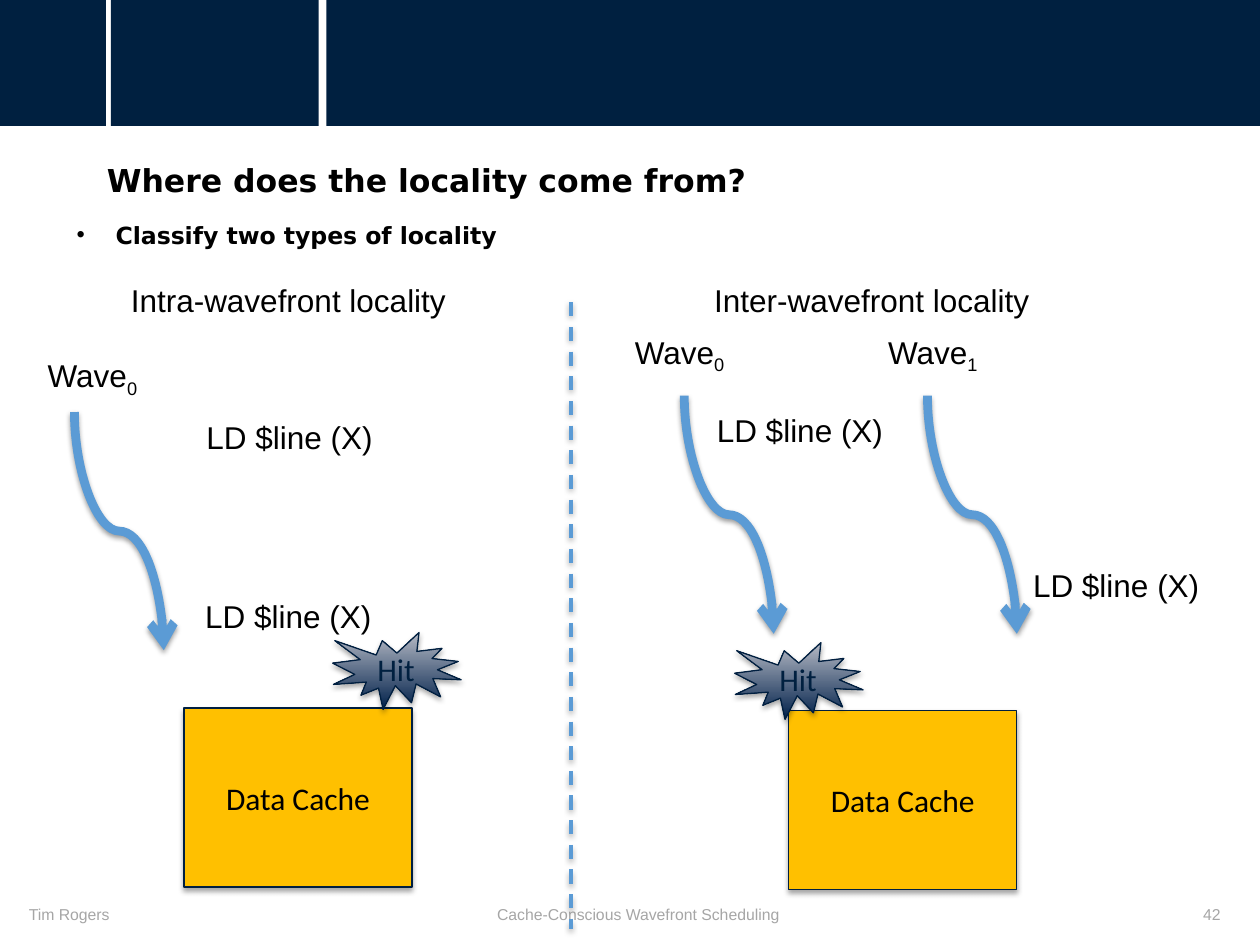
from lxml import etree
from pptx import Presentation
from pptx.dml.color import RGBColor
from pptx.enum.dml import MSO_LINE
from pptx.enum.shapes import MSO_CONNECTOR, MSO_SHAPE
from pptx.enum.text import MSO_ANCHOR, MSO_AUTO_SIZE, PP_ALIGN
from pptx.oxml.ns import qn
from pptx.util import Inches, Pt

RECT, BURST = MSO_SHAPE.RECTANGLE, MSO_SHAPE.EXPLOSION1
LEFT, CENTER = PP_ALIGN.LEFT, PP_ALIGN.CENTER
TOP, MIDDLE = MSO_ANCHOR.TOP, MSO_ANCHOR.MIDDLE

NAVY, EDGE, BLUE, GOLD = "002040", "001F40", "5B9BD5", "FFC000"
DARK, PALE = "00204A", "B6BAC5"

BODY = {"size": Pt(18), "name": "Arial"}
FOOT = {"size": Pt(9), "name": "Arial"}
LABEL = {"size": Pt(18), "name": "Calibri"}
TITLE = {"size": Pt(18), "name": "DejaVu Sans", "bold": True}
BULLET = {"size": Pt(13.5), "name": "DejaVu Sans", "bold": True}

BANNER = [(0, 0.84), (0.88, 1.65), (2.59, 7.5)]
FOOTER = [
    ("Tim Rogers", 0.13, 1.18, LEFT),
    ("Cache-Conscious Wavefront Scheduling", 3.11, 3.91, CENTER),
    ("42", 9.45, 0.43, LEFT),
]
PANELS = [
    {
        "heading": ("Intra-wavefront locality", 0.94),
        "waves": [("0", 0.28, 2.78)],
        "arrows": [(0.59, 3.27)],
        "loads": [(1.54, 3.27), (1.53, 4.69)],
        "cache": (1.46, 5.62),
        "hit": (2.64, 5.02),
    },
    {
        "heading": ("Inter-wavefront locality", 5.57),
        "waves": [("0", 4.94, 2.59), ("1", 6.95, 2.59)],
        "arrows": [(5.43, 3.14), (7.36, 3.14)],
        "loads": [(5.59, 3.21), (8.1, 4.44)],
        "cache": (6.26, 5.64),
        "hit": (5.83, 5.1),
    },
]
HEADING_TOP, LINE_HEIGHT = 2.18, 0.4
ARROW_WIDTH, ARROW_HEIGHT = 0.71, 1.89
DIVIDER_X, DIVIDER_TOP, DIVIDER_BOTTOM = 4.53, 2.4, 7.37


def color(value):
    return RGBColor.from_string(value)


def set_effects(item, opacity=None, distance=0):
    effects = etree.SubElement(item._element.spPr, qn("a:effectLst"))
    if opacity:
        shadow = etree.SubElement(
            effects, qn("a:outerShdw"), blurRad=str(Pt(3.1)),
            dist=str(Pt(distance)), dir="5400000", rotWithShape="0")
        black = etree.SubElement(shadow, qn("a:srgbClr"), val="000000")
        etree.SubElement(black, qn("a:alpha"), val=str(opacity * 1000))


def write(frame, runs, style, ink="000000", align=LEFT, anchor=TOP):
    frame.word_wrap = True
    frame.vertical_anchor = anchor
    para = frame.paragraphs[0]
    para.alignment = align
    for text, baseline in runs:
        span = para.add_run()
        span.text = text
        for key, value in style.items():
            setattr(span.font, key, value)
        span.font.color.rgb = color(ink)
        if baseline:
            span.font._element.set("baseline", str(baseline * 1000))
    return para


def add_text(page, text, left, top, width, height=LINE_HEIGHT, style=BODY,
             subscript="", grow=True, **format_values):
    box = page.shapes.add_textbox(*map(Inches, (left, top, width, height)))
    runs = [(text, 0)] + ([(subscript, -25)] if subscript else [])
    para = write(box.text_frame, runs, style, **format_values)
    if grow:
        box.text_frame.auto_size = MSO_AUTO_SIZE.SHAPE_TO_FIT_TEXT
    return para


def add_block(page, kind, left, top, width, height, fill=None):
    block = page.shapes.add_shape(kind, *map(Inches, (left, top, width, height)))
    if fill:
        block.fill.solid()
        block.fill.fore_color.rgb = color(fill)
    return block


def add_label_block(page, kind, place, size, text, ink, fill=None):
    block = add_block(page, kind, *place, *size, fill)
    if not fill:
        block.fill.gradient()
        block.fill.gradient_angle = 90
        for stop, value in zip(block.fill.gradient_stops, (DARK, PALE)):
            stop.color.rgb = color(value)
    block.line.color.rgb = color(EDGE)
    block.line.width = Pt(0.75)
    set_effects(block, 35, 1.8)
    write(block.text_frame, [(text, 0)], LABEL, ink, CENTER, MIDDLE)


def add_line(page, kind, start, end, weight):
    line = page.shapes.add_connector(kind, *map(Inches, (*start, *end)))
    line.line.color.rgb = color(BLUE)
    line.line.width = Pt(weight)
    return line


def add_wave_arrow(page, left, top):
    middle_x, middle_y = left + ARROW_WIDTH / 2, top + ARROW_HEIGHT / 2
    half_long, half_short = ARROW_HEIGHT / 2, ARROW_WIDTH / 2
    arrow = add_line(page, MSO_CONNECTOR.CURVE,
                     (middle_x + half_long, middle_y - half_short),
                     (middle_x - half_long, middle_y + half_short), 5)
    arrow._element.spPr.find(qn("a:xfrm")).set("rot", "16200000")
    etree.SubElement(arrow.line._get_or_add_ln(), qn("a:tailEnd"), type="arrow")
    set_effects(arrow, 38, 1.6)


def add_bullet(para):
    properties = para._p.get_or_add_pPr()
    properties.set("marL", str(Inches(0.31)))
    properties.set("indent", str(Inches(-0.31)))
    etree.SubElement(properties, qn("a:buFont"), typeface="Arial")
    etree.SubElement(properties, qn("a:buChar"), char="•")


def add_panel(page, panel):
    add_label_block(page, RECT, panel["cache"], (1.81, 1.42), "Data Cache", "000000", GOLD)
    heading, left = panel["heading"]
    add_text(page, heading, left, HEADING_TOP, 2.76)
    for place in panel["arrows"]:
        add_wave_arrow(page, *place)
    for place in panel["loads"]:
        add_text(page, "LD $line (X)", *place, 1.65)
    for number, left, top in panel["waves"]:
        add_text(page, "Wave", left, top, 0.98, subscript=number)
    add_label_block(page, BURST, panel["hit"], (1.02, 0.61), "Hit", NAVY)


def main():
    deck = Presentation()
    deck.slide_width, deck.slide_height = Inches(10), Inches(7.5)
    page = deck.slides.add_slide(deck.slide_layouts[6])

    for left, width in BANNER:
        bar = add_block(page, RECT, left, 0, width, 1, NAVY)
        bar.line.fill.background()
        set_effects(bar)
    for text, left, width, align in FOOTER:
        add_text(page, text, left, 7.13, width, 0.25, FOOT, ink="A6A6A6", align=align)

    add_text(page, "Where does the locality come from?", 0.75, 1.23, 8.27, 0.59,
             TITLE, grow=False)
    add_bullet(add_text(page, "Classify two types of locality", 0.51, 1.7, 8.27, 0.59,
                        BULLET, grow=False))

    for panel in PANELS:
        add_panel(page, panel)

    divider = add_line(page, MSO_CONNECTOR.STRAIGHT,
                       (DIVIDER_X, DIVIDER_TOP), (DIVIDER_X, DIVIDER_BOTTOM), 2)
    divider.line.dash_style = MSO_LINE.DASH
    set_effects(divider, 38, 1.6)
    deck.save("out.pptx")


if __name__ == "__main__":
    main()
